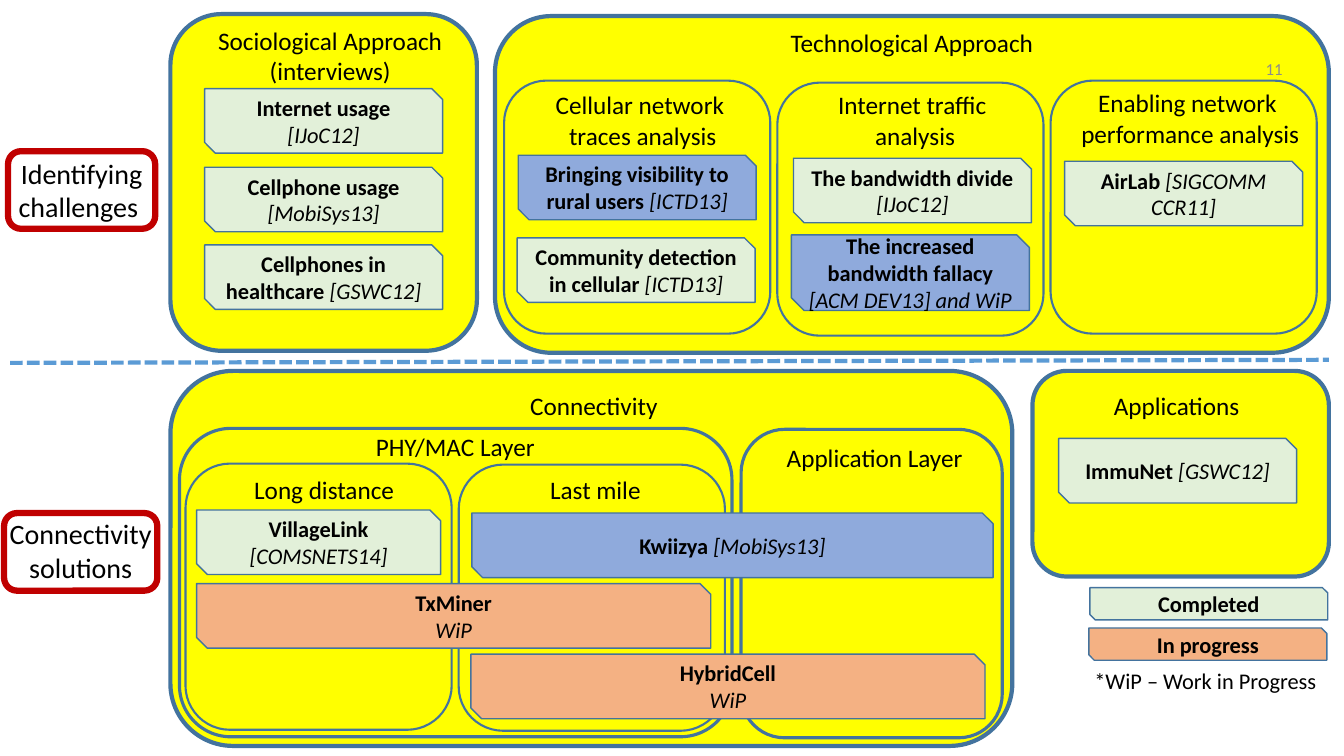
from lxml.etree import SubElement
from pptx import Presentation
from pptx.dml.color import RGBColor
from pptx.enum.dml import MSO_LINE
from pptx.enum.shapes import MSO_CONNECTOR, MSO_SHAPE
from pptx.enum.text import MSO_ANCHOR, PP_ALIGN
from pptx.oxml.ns import qn
from pptx.util import Inches, Pt

YELLOW, GREEN, ORANGE, BLUE = "FFFF00", "E2F0D9", "F4B183", "8FAADC"
OUTLINE, RED, DASH, GRAY = "43739E", "C00000", "5B9BD5", "8C8C8C"

presentation = Presentation()
presentation.slide_width = Inches(13.33)
presentation.slide_height = Inches(7.5)
slide = presentation.slides.add_slide(presentation.slide_layouts[6])


def add_box(kind, bounds, fill=None, line=OUTLINE, weight=1):
    shape = slide.shapes.add_shape(kind, *map(Inches, bounds))
    shape.shadow.inherit = False
    if fill:
        shape.fill.solid()
        shape.fill.fore_color.rgb = RGBColor.from_string(fill)
    else:
        shape.fill.background()
    shape.line.color.rgb = RGBColor.from_string(line)
    shape.line.width = Pt(weight)
    return shape


def write_text(shape, lines, size=18, color="000000", align=PP_ALIGN.CENTER,
               anchor=MSO_ANCHOR.TOP, wrap=False):
    """Write one paragraph per line; a line is a list of (text, bold, italic)."""
    frame = shape.text_frame
    frame.word_wrap = wrap
    frame.vertical_anchor = anchor
    for index, line in enumerate(lines):
        paragraph = frame.add_paragraph() if index else frame.paragraphs[0]
        paragraph.alignment = align
        for text, bold, italic in line:
            run = paragraph.add_run()
            run.text = text
            font = run.font
            font.name, font.size, font.bold, font.italic = "Calibri", Pt(size), bold, italic
            font.color.rgb = RGBColor.from_string(color)


# Yellow panels, one per approach
for bounds in [
    (1.69, 0.14, 3.04, 3.34),
    (4.91, 0.16, 8.27, 3.34),
    (1.69, 3.68, 8.35, 3.72),
    (10.24, 3.68, 2.94, 2.04),
]:
    add_box(MSO_SHAPE.ROUNDED_RECTANGLE, bounds, fill=YELLOW, weight=3)

divider = slide.shapes.add_connector(
    MSO_CONNECTOR.STRAIGHT, Inches(0.1), Inches(3.6), Inches(13.18), Inches(3.57))
divider.line.color.rgb = RGBColor.from_string(DASH)
divider.line.width = Pt(3)
divider.line.dash_style = MSO_LINE.SQUARE_DOT
SubElement(divider._element.spPr, qn("a:effectLst"))

# Outlined groups inside the panels, and the red row frames
for bounds, line, weight in [
    ((5, 0.8, 2.64, 2.51), OUTLINE, 1.5),
    ((7.71, 0.82, 2.64, 2.51), OUTLINE, 1.5),
    ((10.42, 0.8, 2.64, 2.51), OUTLINE, 1.5),
    ((1.84, 4.6, 2.64, 2.64), OUTLINE, 1.5),
    ((4.55, 4.61, 2.64, 2.64), OUTLINE, 1.5),
    ((1.78, 4.25, 5.48, 3.06), OUTLINE, 2.25),
    ((7.35, 4.26, 2.59, 3.06), OUTLINE, 2.25),
    ((0.08, 1.5, 1.46, 0.77), RED, 4.5),
    ((0.04, 5.09, 1.52, 0.77), RED, 4.5),
]:
    add_box(MSO_SHAPE.ROUNDED_RECTANGLE, bounds, line=line, weight=weight)

# Headings
for bounds, lines, size in [
    ((0.08, 1.5, 1.46, 0.77), ["Identifying", "challenges "], 20),
    ((-0.01, 5.08, 1.62, 0.77), ["Connectivity", "solutions"], 20),
    ((2.05, 0.2, 2.45, 0.71), ["Sociological Approach", "(interviews)"], 18),
    ((7.73, 0.22, 2.63, 0.4), ["Technological Approach"], 18),
    ((5.4, 0.84, 1.95, 0.71), ["Cellular network ", "traces analysis"], 18),
    ((8.2, 0.84, 1.75, 0.71), ["Internet traffic ", "analysis"], 18),
    ((10.61, 0.82, 2.39, 0.71), ["Enabling network ", "performance analysis"], 18),
    ((5.15, 3.82, 1.48, 0.4), ["Connectivity"], 18),
    ((3.62, 4.23, 1.79, 0.4), ["PHY/MAC Layer"], 18),
    ((7.69, 4.34, 1.97, 0.4), ["Application Layer"], 18),
    ((2.41, 4.66, 1.61, 0.4), ["Long distance"], 18),
    ((5.35, 4.66, 1.11, 0.4), ["Last mile"], 18),
    ((10.94, 3.82, 1.46, 0.4), ["Applications"], 18),
    ((10.74, 6.57, 2.43, 0.37), ["*WiP – Work in Progress"], 16),
]:
    heading = slide.shapes.add_textbox(*map(Inches, bounds))
    write_text(heading, [[(line, False, False)] for line in lines], size=size)

# Project cards: name in bold, venue or status in italics
WIDTH, HEIGHT = 2.36, 0.64
for bounds, fill, name, note in [
    ((2.03, 0.88, WIDTH, HEIGHT), GREEN, "Internet usage ", "[IJoC12]"),
    ((2.03, 1.66, WIDTH, HEIGHT), GREEN, "Cellphone usage ", "[MobiSys13]"),
    ((2.03, 2.43, WIDTH, HEIGHT), GREEN, "Cellphones in healthcare ", "[GSWC12]"),
    ((5.14, 1.54, WIDTH, HEIGHT), BLUE, "Bringing visibility to rural users ", "[ICTD13]"),
    ((5.13, 2.36, WIDTH, HEIGHT), GREEN, "Community detection in cellular ", "[ICTD13]"),
    ((7.87, 1.57, WIDTH, HEIGHT), GREEN, "The bandwidth divide ", "[IJoC12]"),
    ((7.85, 2.33, WIDTH, 0.75), BLUE, "The increased bandwidth fallacy ",
     "[ACM DEV13] and WiP"),
    ((10.56, 1.6, WIDTH, HEIGHT), GREEN, "AirLab ", "[SIGCOMM CCR11]"),
    ((1.95, 5.06, 2.42, HEIGHT), GREEN, "VillageLink ", "[COMSNETS14]"),
    ((4.68, 5.09, 5.17, HEIGHT), BLUE, "Kwiizya ", "[MobiSys13]"),
    ((1.95, 5.79, 5.1, HEIGHT), ORANGE, "TxMiner", "WiP"),
    ((4.67, 6.49, 5.1, HEIGHT), ORANGE, "HybridCell", "WiP"),
    ((10.5, 4.35, WIDTH, HEIGHT), GREEN, "ImmuNet ", "[GSWC12]"),
    ((10.81, 5.83, WIDTH, 0.32), GREEN, "Completed", None),
    ((10.8, 6.23, WIDTH, 0.32), ORANGE, "In progress", None),
]:
    card = add_box(MSO_SHAPE.SNIP_2_DIAG_RECTANGLE, bounds, fill=fill)
    lines = [[(name, True, False)]]
    if note == "WiP":
        lines.append([(note, False, True)])
    elif note:
        lines[0].append((note, False, True))
    write_text(card, lines, size=16, anchor=MSO_ANCHOR.MIDDLE, wrap=True)

page_number = slide.shapes.add_textbox(Inches(9.82), Inches(0.48), Inches(3), Inches(0.4))
write_text(page_number, [[("11", False, False)]], size=12, color=GRAY,
           align=PP_ALIGN.RIGHT, anchor=MSO_ANCHOR.MIDDLE, wrap=True)

presentation.save("out.pptx")
